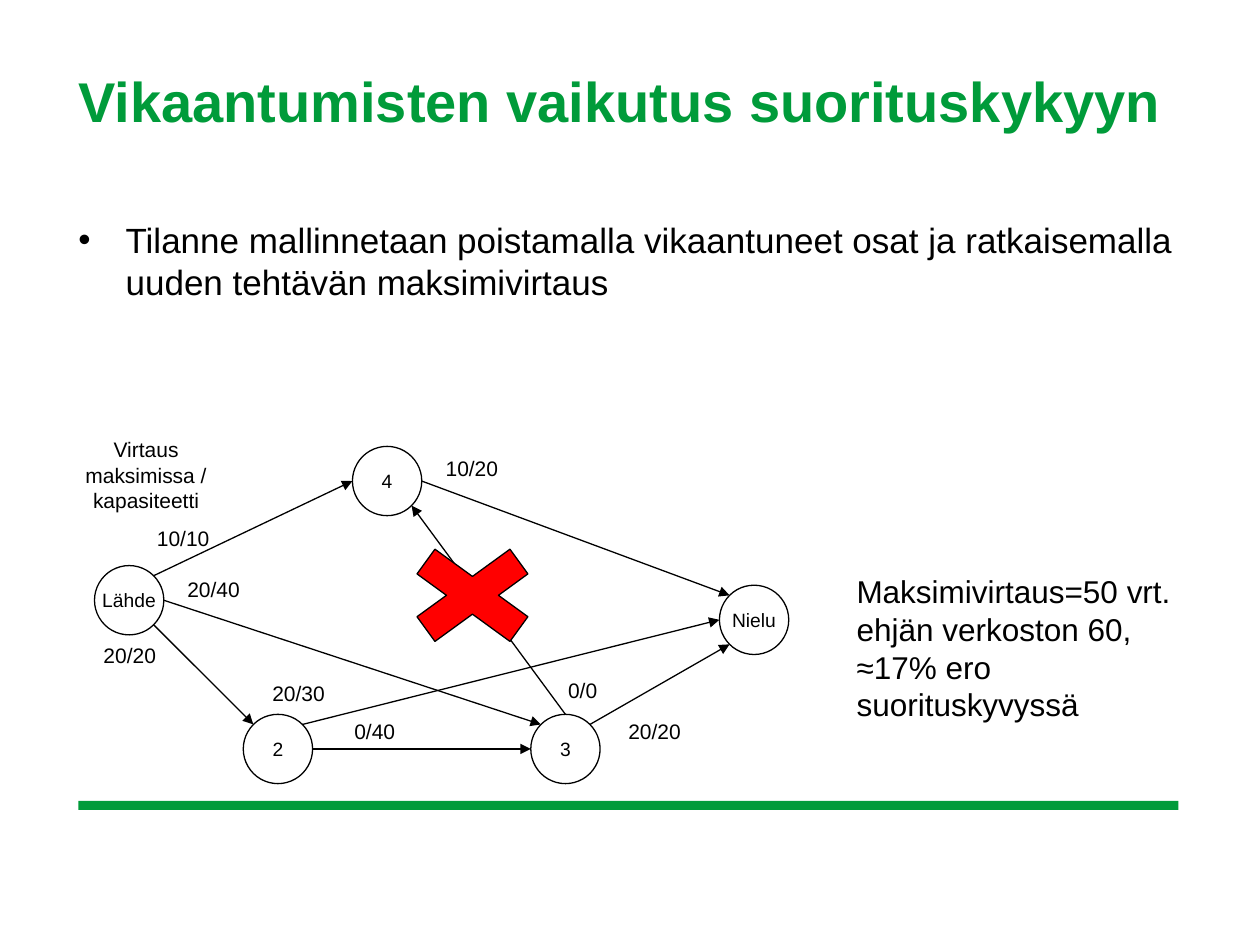
from dataclasses import dataclass
from math import sqrt

from lxml.etree import SubElement
from pptx import Presentation
from pptx.dml.color import RGBColor
from pptx.enum.shapes import MSO_CONNECTOR, MSO_SHAPE
from pptx.enum.text import MSO_ANCHOR, PP_ALIGN
from pptx.oxml.ns import qn
from pptx.util import Pt

GREEN, BLACK, WHITE, RED = "009B3A", "000000", "FFFFFF", "FF0000"
MARGIN, CONTENT_WIDTH = 44.8, 628.6
RADIUS = 19.8
LABEL_HEIGHT = 21.8
DIAGONAL = 1 / sqrt(2)

# Points on a node's rim, as direction from its centre
SIDES = {
    "top": (0, -1), "left": (-1, 0), "right": (1, 0),
    "top left": (-DIAGONAL, -DIAGONAL), "top right": (DIAGONAL, -DIAGONAL),
    "bottom left": (-DIAGONAL, DIAGONAL), "bottom right": (DIAGONAL, DIAGONAL),
}


@dataclass
class Node:
    name: str
    x: float
    y: float

    def rim(self, side: str) -> tuple:
        dx, dy = SIDES[side]
        return Pt(self.x + RADIUS * dx), Pt(self.y + RADIUS * dy)


@dataclass
class Edge:
    start: Node
    start_side: str
    end: Node
    end_side: str


@dataclass
class Label:
    text: str
    left: float
    top: float
    width: float
    height: float = LABEL_HEIGHT
    size: float = 12
    align: PP_ALIGN = PP_ALIGN.CENTER


SOURCE = Node("Lähde", 73.8, 343)
NODE_4 = Node("4", 221.2, 274.9)
SINK = Node("Nielu", 430.9, 354.2)
NODE_3 = Node("3", 323.1, 428)
NODE_2 = Node("2", 158.8, 428)
NODES = [SOURCE, NODE_4, SINK, NODE_3, NODE_2]

EDGES = [
    Edge(SOURCE, "bottom right", NODE_2, "top left"),
    Edge(NODE_2, "right", NODE_3, "left"),
    Edge(SOURCE, "top right", NODE_4, "left"),
    Edge(NODE_3, "top", NODE_4, "bottom right"),
    Edge(SOURCE, "right", NODE_3, "top left"),
    Edge(NODE_2, "top right", SINK, "left"),
    Edge(NODE_4, "right", SINK, "top left"),
    Edge(NODE_3, "top right", SINK, "bottom left"),
]

LABELS = [
    Label("10/10", 82, 296.6, 45.4),
    Label("20/40", 97.2, 325.8, 49.7),
    Label("20/20", 47.5, 363.6, 53.3),
    Label("10/20", 241.2, 257, 56.9),
    Label("20/30", 146.9, 385.2, 47.5),
    Label("0/40", 190.1, 406.8, 48.2),
    Label("0/0", 308.9, 383.8, 48.2),
    Label("20/20", 344.9, 406.8, 58.3),
    Label("Virtaus maksimissa / kapasiteetti", 22.3, 246.2, 122.4, 36),
    Label("Maksimivirtaus=50 vrt. ehjän verkoston 60, ≈17% ero suorituskyvyssä",
          482.4, 323.3, 213.8, 94.3, 18, PP_ALIGN.LEFT),
]


def colour(hex_code: str) -> RGBColor:
    return RGBColor.from_string(hex_code)


def format_paragraph(paragraph, size: float, hex_code: str = BLACK,
                     align: PP_ALIGN = PP_ALIGN.LEFT, bold: bool = False) -> None:
    paragraph.alignment = align
    font = paragraph.font
    font.name, font.size, font.bold = "Arial", Pt(size), bold
    font.color.rgb = colour(hex_code)


def clear_insets(frame) -> None:
    frame.margin_left = frame.margin_right = 0
    frame.margin_top = frame.margin_bottom = 0
    frame.vertical_anchor = MSO_ANCHOR.TOP
    frame.word_wrap = True


def add_filled(slide, kind: MSO_SHAPE, left: float, top: float, width: float,
               height: float, fill: str, outlined: bool = True):
    shape = slide.shapes.add_shape(kind, Pt(left), Pt(top), Pt(width), Pt(height))
    shape.shadow.inherit = False
    shape.fill.solid()
    shape.fill.fore_color.rgb = colour(fill)
    if outlined:
        shape.line.color.rgb = colour(BLACK)
        shape.line.width = Pt(0.75)
    else:
        shape.line.fill.background()
    return shape


def add_title(slide, text: str) -> None:
    title = slide.shapes.title
    title.left, title.top = Pt(MARGIN), Pt(38.2)
    title.width, title.height = Pt(CONTENT_WIDTH), Pt(85)
    clear_insets(title.text_frame)
    title.text_frame.text = text
    format_paragraph(title.text_frame.paragraphs[0], 32, GREEN, bold=True)


def add_bullet(slide, text: str) -> None:
    body = slide.shapes.add_textbox(Pt(MARGIN), Pt(124.6), Pt(CONTENT_WIDTH), Pt(325.4))
    clear_insets(body.text_frame)
    paragraph = body.text_frame.paragraphs[0]
    paragraph.text = text
    properties = paragraph._p.get_or_add_pPr()
    properties.set("marL", str(Pt(27)))
    properties.set("indent", str(Pt(-27)))
    SubElement(properties, qn("a:buFont"), typeface="Arial")
    SubElement(properties, qn("a:buChar"), char="•")
    format_paragraph(paragraph, 20)


def add_node(slide, node: Node) -> None:
    circle = add_filled(slide, MSO_SHAPE.OVAL, node.x - RADIUS, node.y - RADIUS,
                        2 * RADIUS, 2 * RADIUS, WHITE)
    frame = circle.text_frame
    frame.text = node.name
    frame.word_wrap = False
    frame.vertical_anchor = MSO_ANCHOR.MIDDLE
    format_paragraph(frame.paragraphs[0], 11, align=PP_ALIGN.CENTER)


def add_edge(slide, edge: Edge) -> None:
    arrow = slide.shapes.add_connector(
        MSO_CONNECTOR.STRAIGHT,
        *edge.start.rim(edge.start_side), *edge.end.rim(edge.end_side))
    arrow.line.color.rgb = colour(BLACK)
    arrow.line.width = Pt(0.75)
    SubElement(arrow.line._get_or_add_ln(), qn("a:tailEnd"), type="triangle")
    SubElement(arrow._element.spPr, qn("a:effectLst"))


def add_label(slide, label: Label) -> None:
    box = slide.shapes.add_textbox(Pt(label.left), Pt(label.top),
                                   Pt(label.width), Pt(label.height))
    box.text_frame.word_wrap = True
    box.text_frame.text = label.text
    format_paragraph(box.text_frame.paragraphs[0], label.size, align=label.align)


def main() -> None:
    presentation = Presentation()
    presentation.slide_width, presentation.slide_height = Pt(720), Pt(540)
    slide = presentation.slides.add_slide(presentation.slide_layouts[5])

    # Heading, bullet and the green rule at the foot
    add_filled(slide, MSO_SHAPE.RECTANGLE, MARGIN, 457.7, CONTENT_WIDTH, 5.1,
               GREEN, outlined=False)
    add_title(slide, "Vikaantumisten vaikutus suorituskykyyn")
    add_bullet(slide, "Tilanne mallinnetaan poistamalla vikaantuneet osat ja "
                      "ratkaisemalla uuden tehtävän maksimivirtaus")

    # Flow network
    for node in NODES:
        add_node(slide, node)
    for edge in EDGES:
        add_edge(slide, edge)
    for label in LABELS:
        add_label(slide, label)

    # Cross over the failed link
    add_filled(slide, MSO_SHAPE.MATH_MULTIPLY, 218.9, 303.1, 102.2, 74.2, RED)
    presentation.save("out.pptx")


if __name__ == "__main__":
    main()
